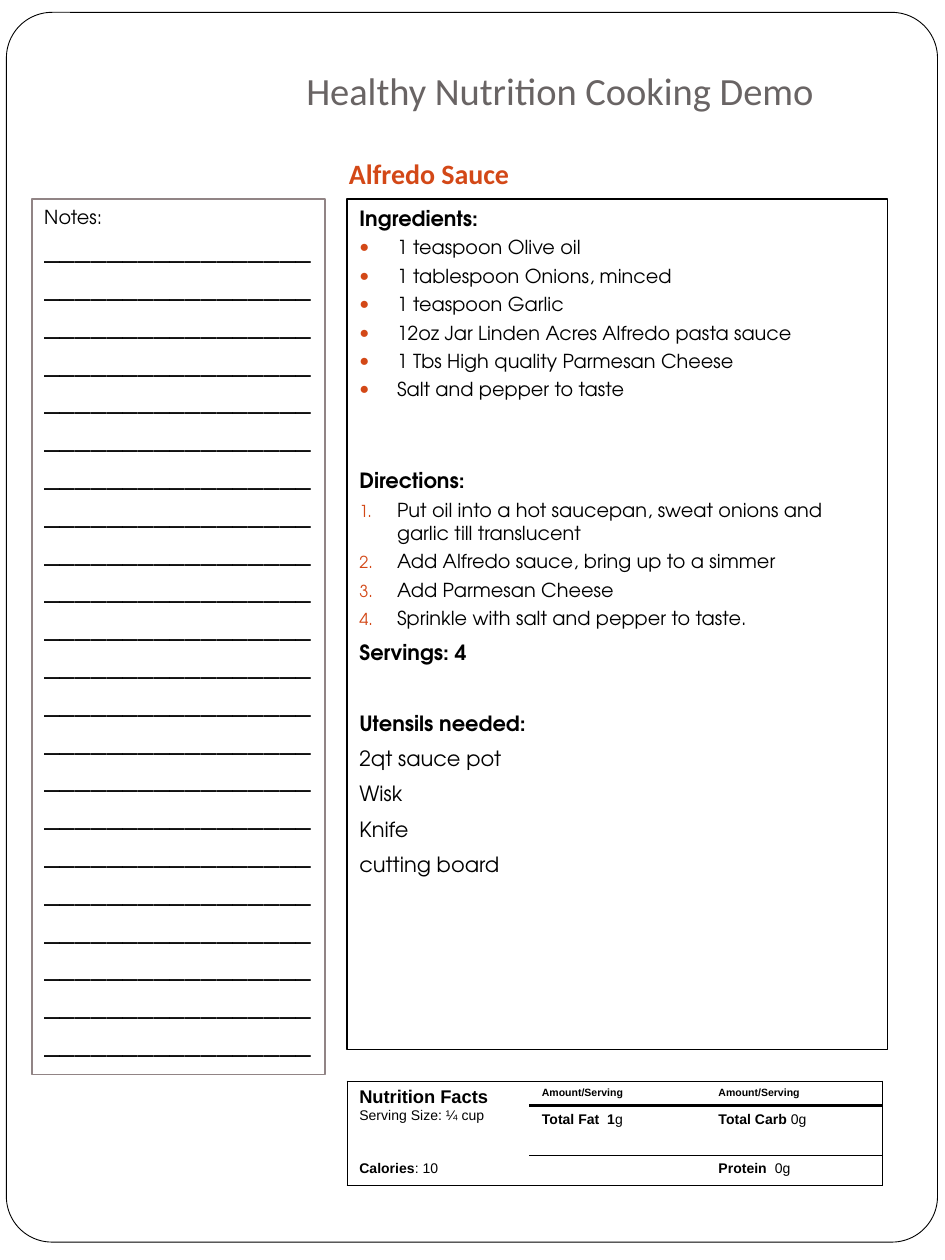
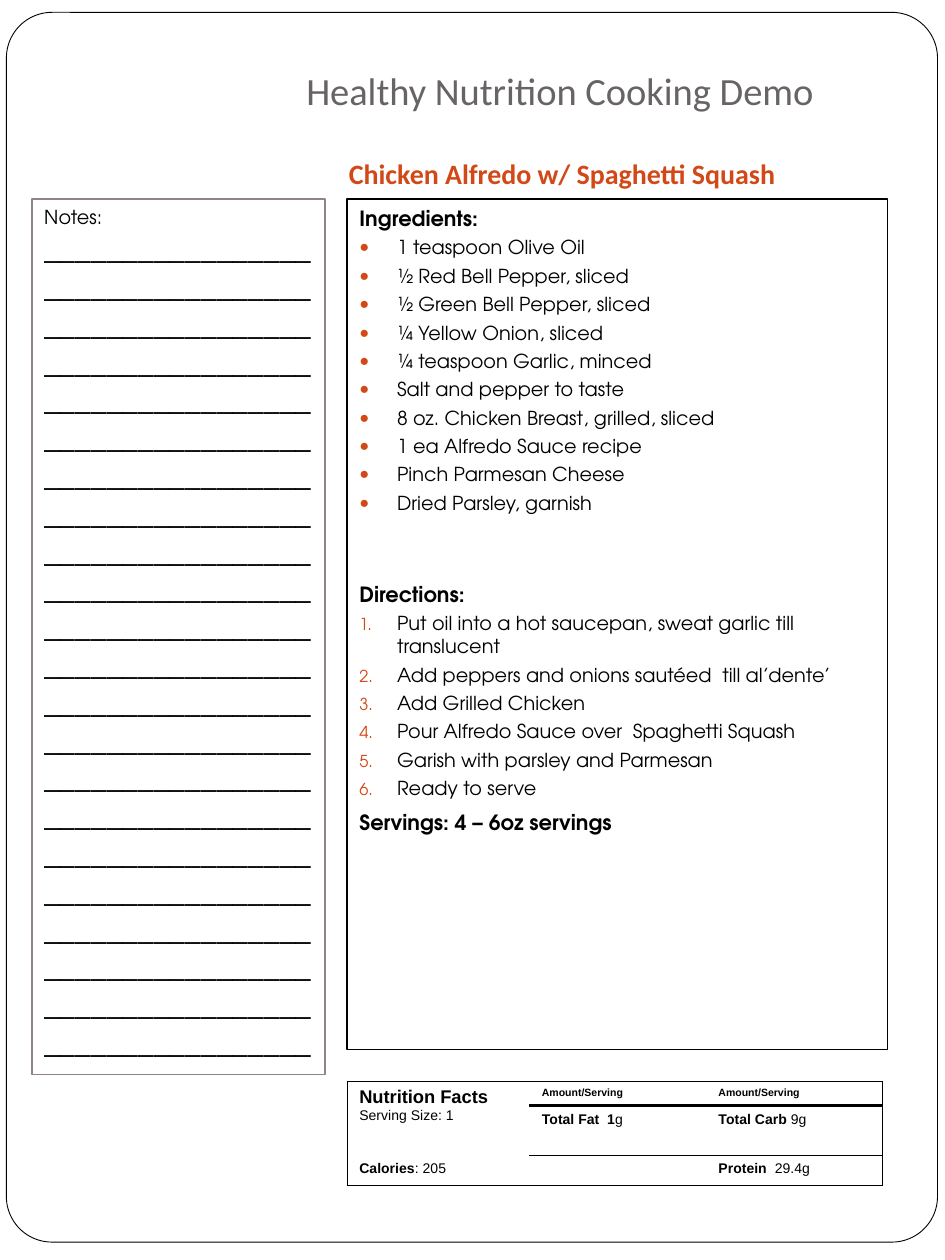
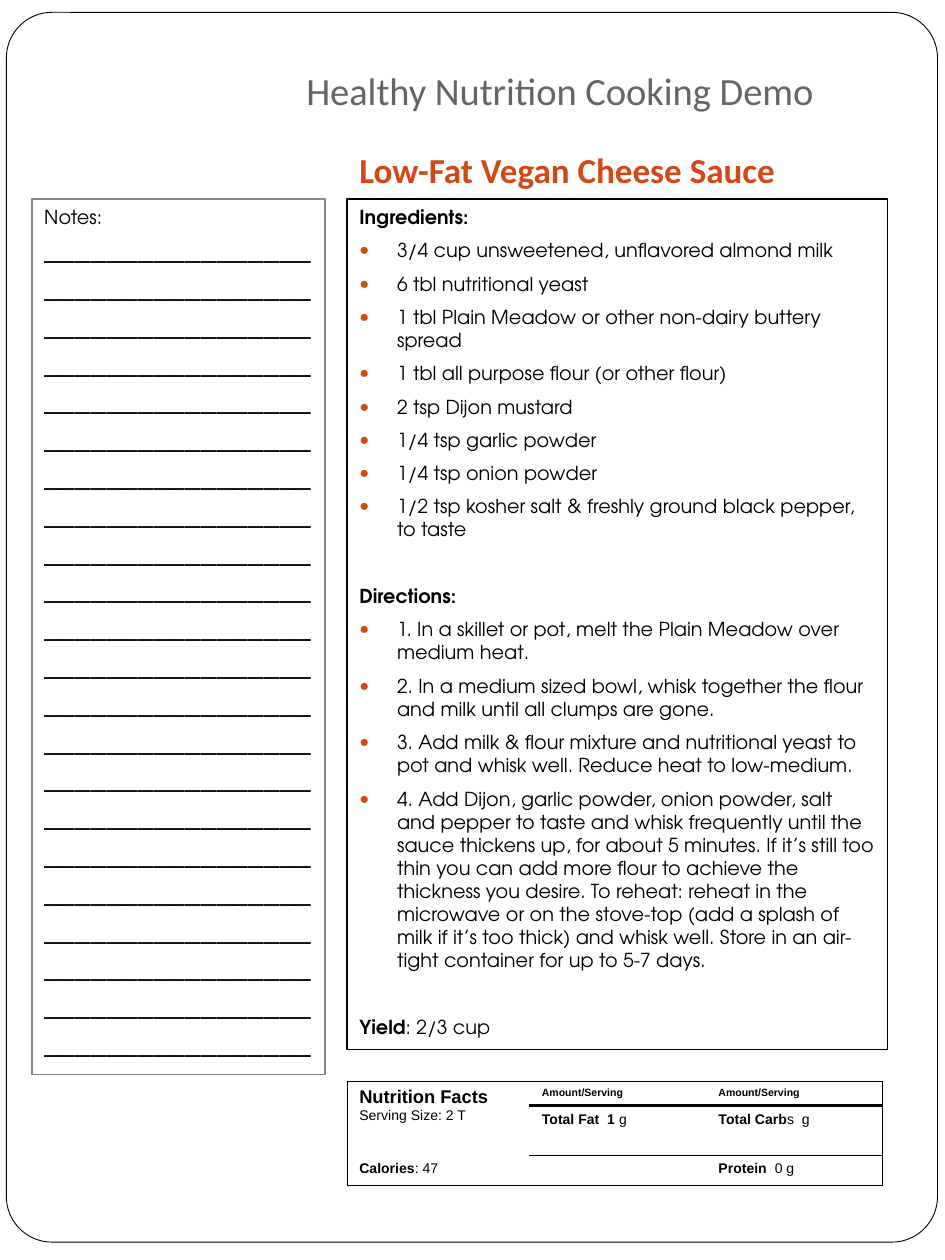
from dataclasses import dataclass

from lxml import etree
from pptx import Presentation
from pptx.dml.color import RGBColor
from pptx.enum.shapes import MSO_SHAPE
from pptx.enum.text import MSO_ANCHOR, MSO_AUTO_SIZE, PP_ALIGN
from pptx.oxml.ns import qn
from pptx.util import Cm, Pt

ROUNDED, RECT = MSO_SHAPE.ROUNDED_RECTANGLE, MSO_SHAPE.RECTANGLE
TOP, BOTTOM = MSO_ANCHOR.TOP, MSO_ANCHOR.BOTTOM
NO_FIT, LEFT = MSO_AUTO_SIZE.NONE, PP_ALIGN.LEFT


@dataclass(frozen=True)
class Theme:
    black: str = "000000"
    white: str = "FFFFFF"
    gray: str = "696464"
    accent: str = "D34817"
    outline: str = "918485"
    heading_font: str = "Calibri"
    body_font: str = "TeX Gyre Adventor"
    table_font: str = "Arial"
    title: float = 22
    head: float = 12
    body: float = 11
    rule: float = 18
    facts_title: float = 10.5
    facts: float = 8
    facts_small: float = 6
    hairline: float = 0.25
    thick: float = 2.25


T = Theme()
DECK_TITLE = "Healthy Nutrition Cooking Demo"
RULE_ROWS, RULE_CHARS = 22, 17
COLUMNS, ROWS = (3.68, 3.56, 3.56), (0.5, 0.99, 0.56)

# Formats of the recipe lines
KINDS = {
    "head": dict(bold=True, size=T.head, indent=0.76),
    "small head": dict(bold=True, indent=0.76),
    "dot": dict(indent=0.76, bullet="●"),
    "step": dict(indent=0.76, bullet="1."),
    "tool": dict(size=T.head, indent=1.42),
}

# Each group of lines: kind, space before every line, lines
RECIPES = [
    dict(
        name="Alfredo Sauce", name_size=16, name_box=(6.78, 2.54, 12.27, 1.42),
        groups=[
            ("head", 5.8, ["Ingredients:"]),
            ("dot", 3, [
                "1 teaspoon Olive oil",
                "1 tablespoon Onions, minced",
                "1 teaspoon Garlic",
                "12oz Jar Linden Acres Alfredo pasta sauce",
                "1 Tbs High quality Parmesan Cheese",
                "Salt and pepper to taste",
            ]),
            ("head", 38.2, ["Directions:"]),
            ("step", 3, [
                "Put oil into a hot saucepan, sweat onions and garlic till translucent",
                "Add Alfredo sauce, bring up to a simmer",
                "Add Parmesan Cheese",
                "Sprinkle with salt and pepper to taste.",
            ]),
            ("head", 5.8, ["Servings: 4"]),
            ("head", 26, ["Utensils needed:"]),
            ("tool", 5.8, ["2qt sauce pot", "Wisk", "Knife", "cutting board"]),
        ],
        serving="¼ cup", calories="10", fat=("Total Fat  1", "g"),
        carb=" 0g", protein="0g",
    ),
    dict(
        name="Chicken Alfredo w/ Spaghetti Squash", name_size=16,
        name_box=(6.78, 2.54, 12.27, 1.42),
        groups=[
            ("head", 5.8, ["Ingredients:"]),
            ("dot", 3, [
                "1 teaspoon Olive Oil",
                "½ Red Bell Pepper, sliced",
                "½ Green Bell Pepper, sliced",
                "¼ Yellow Onion, sliced",
                "¼ teaspoon Garlic, minced",
                "Salt and pepper to taste",
                "8 oz. Chicken Breast, grilled, sliced",
                "1 ea Alfredo Sauce recipe",
                "Pinch Parmesan Cheese",
                "Dried Parsley, garnish",
            ]),
            ("head", 38.2, ["Directions:"]),
            ("step", 3, [
                "Put oil into a hot saucepan, sweat garlic till translucent",
                "Add peppers and onions sautéed  till al’dente’",
                "Add Grilled Chicken",
                "Pour Alfredo Sauce over  Spaghetti Squash",
                "Garish with parsley and Parmesan",
                "Ready to serve",
            ]),
            ("head", 5.8, ["Servings: 4 – 6oz servings"]),
        ],
        serving="1", calories="205", fat=("Total Fat  1", "g"),
        carb=" 9g", protein="29.4g",
    ),
    dict(
        name="Low-Fat Vegan Cheese Sauce", name_size=20,
        name_box=(6.99, 2.54, 11.43, 1.42),
        groups=[
            ("small head", 5.8, ["Ingredients:"]),
            ("dot", 5.8, [
                "3/4 cup unsweetened, unflavored almond milk",
                "6 tbl nutritional yeast",
                "1 tbl Plain Meadow or other non-dairy buttery spread",
                "1 tbl all purpose flour (or other flour)",
                "2 tsp Dijon mustard",
                "1/4 tsp garlic powder",
                "1/4 tsp onion powder",
                "1/2 tsp kosher salt & freshly ground black pepper, to taste",
            ]),
            ("small head", 24.8, ["Directions:"]),
            ("dot", 5.8, [
                "1. In a skillet or pot, melt the Plain Meadow over medium heat.",
                "2. In a medium sized bowl, whisk together the flour and milk "
                "until all clumps are gone.",
                "3. Add milk & flour mixture and nutritional yeast to pot and "
                "whisk well. Reduce heat to low-medium.",
                "4. Add Dijon, garlic powder, onion powder, salt and pepper to "
                "taste and whisk frequently until the sauce thickens up, for "
                "about 5 minutes. If it’s still too thin you can add more flour "
                "to achieve the thickness you desire. To reheat: reheat in the "
                "microwave or on the stove-top (add a splash of milk if it’s too "
                "thick) and whisk well. Store in an air-tight container for up "
                "to 5-7 days.",
            ]),
            ("small head", 24.8, [("Yield", ": 2/3 cup")]),
        ],
        serving="2 T", calories="47", fat=("Total Fat  1 ", "g"),
        carb="s  g", protein="0 g",
    ),
]


def add_text(tf, text, rest="", size=T.body, font=T.body_font, color=T.black,
             bold=False, before=0, indent=0, bullet=None):
    """Add a paragraph; rest follows text in regular weight."""
    p = tf.paragraphs[0]
    if p.runs:
        p = tf.add_paragraph()
    p.alignment = LEFT
    p.space_before = Pt(before)
    pPr = p._p.get_or_add_pPr()
    pPr.set("marL", str(Cm(indent)))
    pPr.set("indent", str(-Cm(indent)))
    if bullet:
        clr = etree.SubElement(pPr, qn("a:buClr"))
        etree.SubElement(clr, qn("a:srgbClr"), val=T.accent)
        etree.SubElement(pPr, qn("a:buSzPct"), val="85000")
    if bullet == "1.":
        etree.SubElement(pPr, qn("a:buAutoNum"), type="arabicPeriod")
    elif bullet:
        etree.SubElement(pPr, qn("a:buChar"), char=bullet)
    else:
        etree.SubElement(pPr, qn("a:buNone"))
    for part, weight in ((text, bold), (rest, False)):
        if part:
            r = p.add_run()
            r.text = part
            r.font.size, r.font.name, r.font.bold = Pt(size), font, weight
            r.font.color.rgb = RGBColor.from_string(color)


def format_box(sp, box=None, line=None, width=1, anchor=TOP):
    """Place a shape and give it a plain outline and text settings."""
    if box:
        sp.left, sp.top, sp.width, sp.height = [Cm(v) for v in box]
    if line:
        sp.fill.solid()
        sp.fill.fore_color.rgb = RGBColor.from_string(T.white)
        sp.line.color.rgb = RGBColor.from_string(line)
        sp.line.width = Pt(width)
    tf = sp.text_frame
    tf.word_wrap, tf.auto_size, tf.vertical_anchor = True, NO_FIT, anchor
    return tf


prs = Presentation()
prs.slide_width, prs.slide_height = Cm(19.05), Cm(25.4)
layout = prs.slide_layouts[3]
frame = None

for recipe in RECIPES:
    s = prs.slides.add_slide(layout)

    # Rounded page frame, kept on the shared layout
    if frame is None:
        frame = s.shapes.add_shape(ROUNDED, Cm(0.13), Cm(0.25), Cm(18.77), Cm(24.79))
        frame.adjustments[0] = 0.049
        frame.shadow.inherit = False
        format_box(frame, line=T.black, width=0.5)
        layout.shapes.element.insert(2, frame.element)

    # Title and recipe name
    tf = format_box(s.shapes.title, (5.92, 1.02, 12.17, 1.52), anchor=BOTTOM)
    tf.margin_bottom = Cm(0.25)
    add_text(tf, DECK_TITLE, size=T.title, font=T.heading_font, color=T.gray)
    tf = format_box(s.placeholders[1], recipe["name_box"], anchor=BOTTOM)
    add_text(tf, recipe["name"], size=recipe["name_size"], font=T.heading_font,
             color=T.accent, bold=True, before=5.8)

    # Ingredients and directions
    tf = format_box(s.placeholders[2], (6.99, 4.01, 10.9, 17.15), line=T.black)
    for kind, before, lines in recipe["groups"]:
        for line in lines:
            text, rest = (line, "") if isinstance(line, str) else line
            add_text(tf, text, rest, before=before, **KINDS[kind])

    # Nutrition facts
    tbl = s.shapes.add_table(3, 3, Cm(6.99), Cm(21.79), Cm(sum(COLUMNS)),
                             Cm(sum(ROWS))).table
    tbl.first_row = tbl.horz_banding = False
    for column, width in zip(tbl.columns, COLUMNS):
        column.width = Cm(width)
    for row, height in zip(tbl.rows, ROWS):
        row.height = Cm(height)
    amount = ("Amount/Serving", "")
    facts = [
        [("Nutrition Facts", ""), amount, amount],
        [None, recipe["fat"], ("Total Carb", recipe["carb"])],
        [("Calories", ": " + recipe["calories"]), None,
         ("Protein  ", recipe["protein"])],
    ]
    for i, row in enumerate(facts):
        for j, entry in enumerate(row):
            cell = tbl.cell(i, j)
            inner = (T.thick, T.hairline) if j else (0, 0)
            rules = (T.hairline, *inner, T.hairline)
            edges = {"L": T.hairline * (j == 0), "R": T.hairline * (j == 2),
                     "T": rules[i], "B": rules[i + 1]}
            tcPr = cell._tc.get_or_add_tcPr()
            for side, width in edges.items():
                ln = etree.SubElement(tcPr, qn("a:ln" + side), w=str(Pt(width)))
                if width:
                    fill = etree.SubElement(ln, qn("a:solidFill"))
                    etree.SubElement(fill, qn("a:srgbClr"), val=T.black)
                else:
                    etree.SubElement(ln, qn("a:noFill"))
            cell.fill.background()
            if entry:
                size = T.facts if i else T.facts_small if j else T.facts_title
                add_text(cell.text_frame, *entry, size=size, font=T.table_font,
                         bold=True)
            else:
                etree.SubElement(cell.text_frame.paragraphs[0]._p,
                                 qn("a:endParaRPr"), sz=str(int(T.facts * 100)))
    add_text(tbl.cell(0, 0).text_frame, "Serving Size: " + recipe["serving"],
             size=T.facts, font=T.table_font)
    tbl.cell(0, 0).merge(tbl.cell(1, 0))

    # Writing panel with ruled lines
    panel = s.shapes.add_shape(RECT, Cm(0.64), Cm(4.01), Cm(5.92), Cm(17.65))
    panel.shadow.inherit = False
    tf = format_box(panel, line=T.outline)
    add_text(tf, "Notes:")
    add_text(tf, "_" * RULE_ROWS * RULE_CHARS, size=T.rule)

prs.save("out.pptx")
